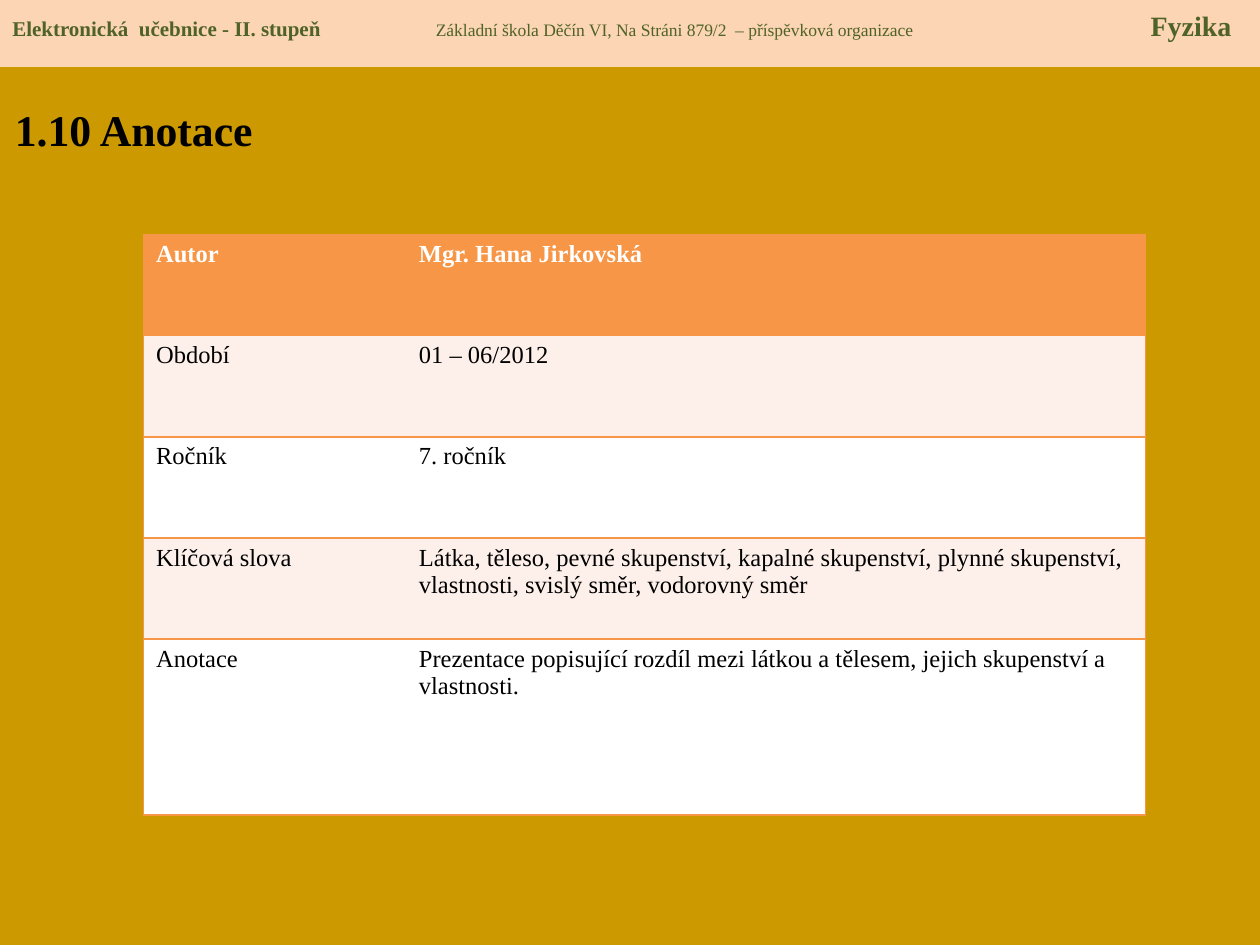
"""Build the annotation slide of a physics e-textbook."""
from lxml import etree
from pptx import Presentation
from pptx.dml.color import RGBColor
from pptx.enum import shapes, text
from pptx.oxml import ns
from pptx.util import Pt

GOLD = RGBColor(0xCC, 0x99, 0x00)
PEACH = RGBColor(0xFC, 0xD5, 0xB5)
GREEN = RGBColor(0x4F, 0x62, 0x28)
ORANGE = RGBColor(0xF7, 0x96, 0x46)
PINK = RGBColor(0xFD, 0xEF, 0xE9)
WHITE = RGBColor(0xFF, 0xFF, 0xFF)
BLACK = RGBColor(0, 0, 0)
FONT = "Times New Roman"

HEAD = [
    ("Elektronická  učebnice - II. stupeň", 12, True),
    ("\tZákladní škola Děčín VI, Na Stráni 879/2  – příspěvková organizace", 10, False),
    ("\tFyzika", 16, True),
]
STOPS = [242, 650.5]
TITLE = "1.10 Anotace"
ROWS = [
    ("Autor", "Mgr. Hana Jirkovská"),
    ("Období", "01 – 06/2012"),
    ("Ročník", "7. ročník"),
    ("Klíčová slova", "Látka, těleso, pevné skupenství, kapalné skupenství, "
     "plynné skupenství, vlastnosti, svislý směr, vodorovný směr"),
    ("Anotace", "Prezentace popisující rozdíl mezi látkou a tělesem, "
     "jejich skupenství a vlastnosti."),
]
WIDTHS = [150.2, 422.4]
HEIGHTS = [57.8] * 4 + [100.6]


def add_text(para, words, size=14, color=BLACK, bold=False):
    run = para.add_run()
    run.text = words
    font = run.font
    font.name, font.size, font.bold = FONT, Pt(size), bold
    font.color.rgb = color


def set_frame(frame, top):
    frame.word_wrap = True
    frame.vertical_anchor = text.MSO_ANCHOR.TOP
    frame.margin_top = Pt(top)
    para = frame.paragraphs[0]
    para.alignment = text.PP_ALIGN.LEFT
    return para


def add_tabs(para, stops):
    tabs = etree.SubElement(para._p.get_or_add_pPr(), ns.qn("a:tabLst"))
    for stop in stops:
        etree.SubElement(tabs, ns.qn("a:tab"), pos=str(Pt(stop)), algn="l")


def set_edges(cell, drawn):
    props = cell._tc.get_or_add_tcPr()
    for side in "LRTB":
        line = etree.SubElement(props, ns.qn("a:ln" + side), w=str(Pt(1)))
        if side in drawn:
            fill = etree.SubElement(line, ns.qn("a:solidFill"))
            etree.SubElement(fill, ns.qn("a:srgbClr"), val=str(ORANGE))
        else:
            etree.SubElement(line, ns.qn("a:noFill"))


def add_head(slide):
    bar = slide.shapes.add_shape(shapes.MSO_SHAPE.RECTANGLE, 0, 0, Pt(720), Pt(38.2))
    bar.shadow.inherit = False
    bar.fill.solid()
    bar.fill.fore_color.rgb = PEACH
    bar.line.fill.background()
    para = set_frame(bar.text_frame, 5)
    add_tabs(para, STOPS)
    for words, size, bold in HEAD:
        add_text(para, words, size=size, color=GREEN, bold=bold)


def add_title(slide):
    box = slide.shapes.add_textbox(Pt(1.4), Pt(52.6), Pt(301.7), Pt(62.6))
    add_text(set_frame(box.text_frame, 6), TITLE, size=25, bold=True)


def add_grid(slide):
    table = slide.shapes.add_table(
        len(ROWS), len(WIDTHS), Pt(82), Pt(134), Pt(sum(WIDTHS)), Pt(sum(HEIGHTS))).table
    table.first_row = table.horz_banding = False
    for col, width in zip(table.columns, WIDTHS):
        col.width = Pt(width)
    for i, (row, height) in enumerate(zip(table.rows, HEIGHTS)):
        row.height = Pt(height)
        shade = ORANGE if i == 0 else PINK if i % 2 else WHITE
        for cell, words, edges in zip(row.cells, ROWS[i], ("LTB", "RTB")):
            set_edges(cell, edges)
            cell.fill.solid()
            cell.fill.fore_color.rgb = shade
            add_text(cell.text_frame.paragraphs[0], words,
                     color=BLACK if i else WHITE, bold=i == 0)


def main():
    deck = Presentation()
    deck.slide_width, deck.slide_height = Pt(720), Pt(540)
    slide = deck.slides.add_slide(deck.slide_layouts[6])
    slide.background.fill.solid()
    slide.background.fill.fore_color.rgb = GOLD
    add_head(slide)
    add_title(slide)
    add_grid(slide)
    deck.save("out.pptx")


if __name__ == "__main__":
    main()
